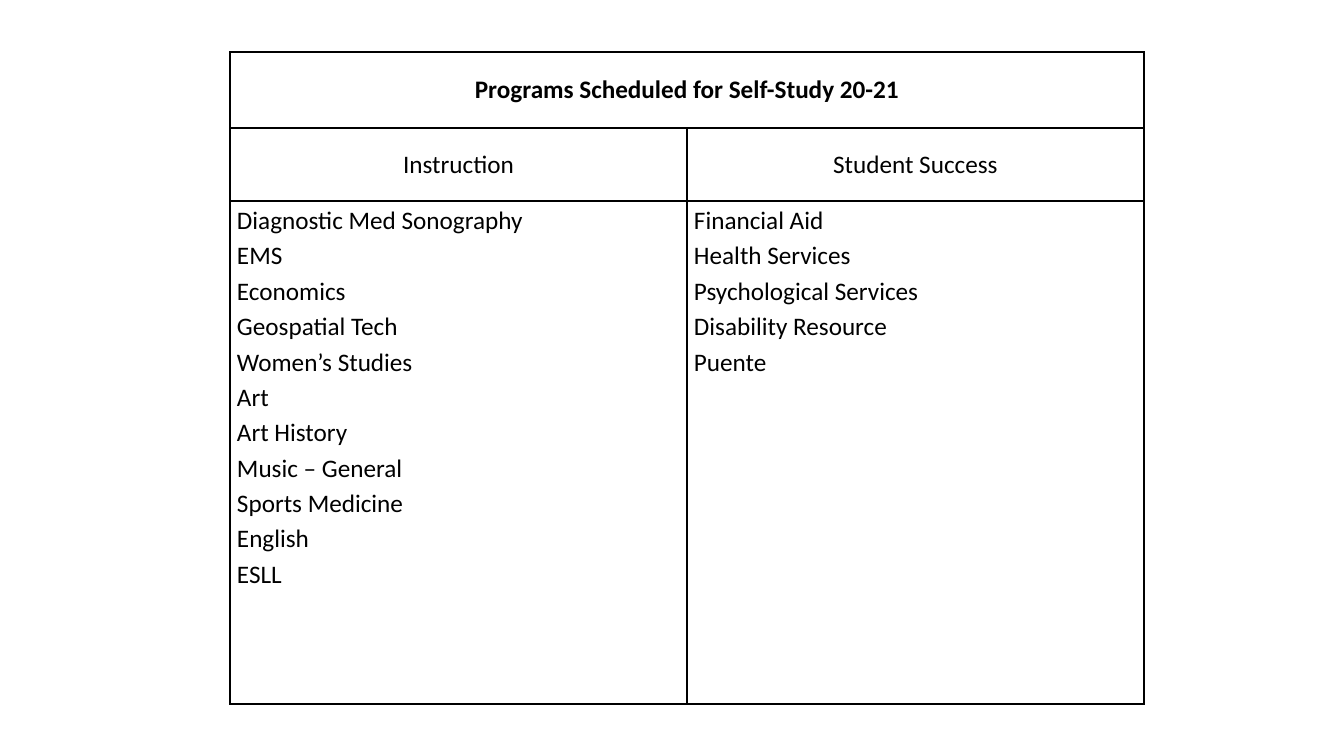
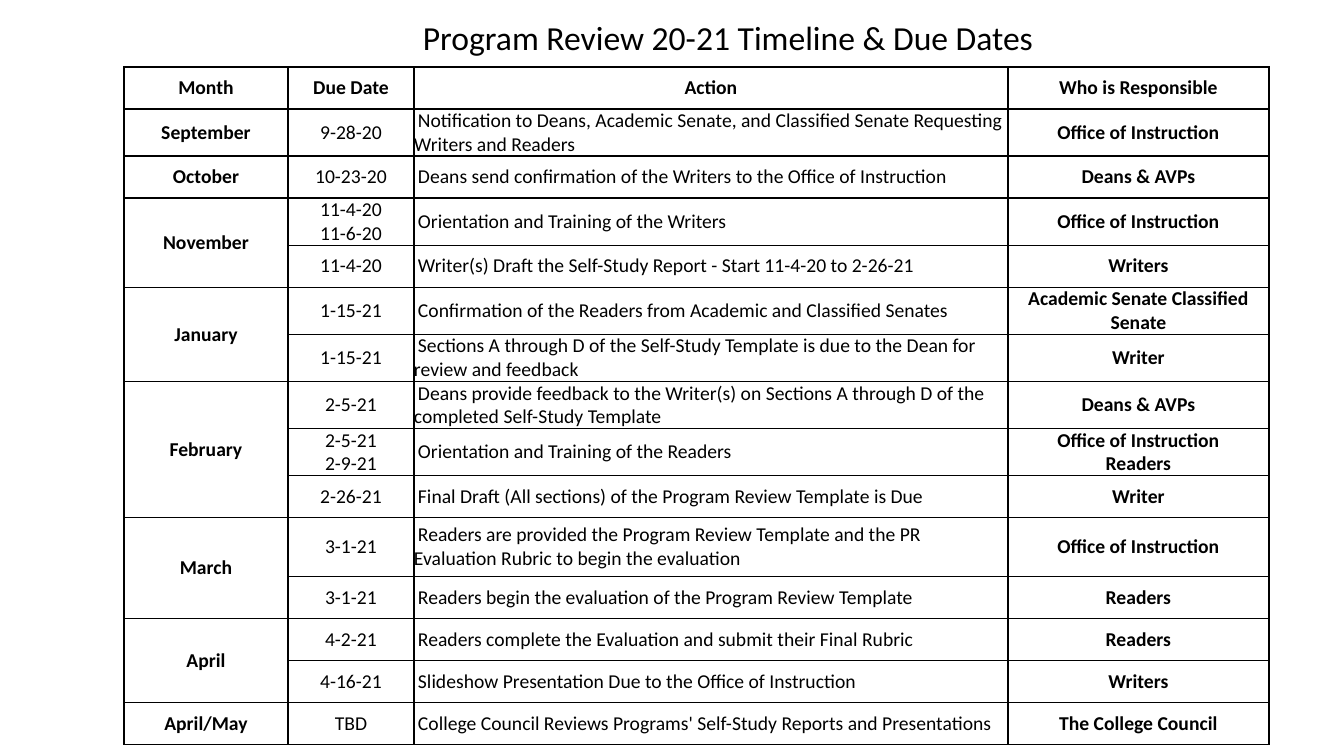
from lxml import etree
from pptx import Presentation
from pptx.dml.color import RGBColor
from pptx.enum import text
from pptx.oxml.ns import qn
from pptx.util import Pt

PX = 914400 / 100.8
BLACK = RGBColor(0x00, 0x00, 0x00)
FONT = "Calibri"
CENTER, LEFT = text.PP_ALIGN.CENTER, text.PP_ALIGN.LEFT
TOP, MIDDLE = text.MSO_ANCHOR.TOP, text.MSO_ANCHOR.MIDDLE


def px(length):
    return round(length * PX)


def add_grid(slide, left, top, widths, heights, inset):
    """Add an unfilled table with thin black borders on every cell."""
    table = slide.shapes.add_table(len(heights), len(widths), px(left), px(top),
                                   px(sum(widths)), px(sum(heights))).table
    table.first_row = table.horz_banding = False
    for column, width in zip(table.columns, widths):
        column.width = px(width)
    for row, height in zip(table.rows, heights):
        row.height = px(height)
    for cell in table.iter_cells():
        cell.margin_left = cell.margin_right = px(inset)
        cell.margin_top = cell.margin_bottom = 0
        properties = cell._tc.get_or_add_tcPr()
        for edge in ("a:lnL", "a:lnR", "a:lnT", "a:lnB"):
            line = etree.SubElement(properties, qn(edge), w=str(Pt(1)))
            fill = etree.SubElement(line, qn("a:solidFill"))
            etree.SubElement(fill, qn("a:srgbClr"), val=str(BLACK))
        cell.fill.background()
    return table


def write(holder, words, size, bold=False, align=CENTER, anchor=MIDDLE,
          spacing=1.0, indent=0):
    """Fill a cell or text frame, one paragraph per line of words."""
    holder.vertical_anchor = anchor
    holder.text = words
    frame = getattr(holder, "text_frame", holder)
    for paragraph in frame.paragraphs:
        paragraph.alignment = align
        paragraph.line_spacing = spacing
        if indent:
            paragraph._p.get_or_add_pPr().set("indent", str(px(indent)))
        font = paragraph.font
        font.name, font.size, font.bold = FONT, Pt(size), bold
        font.color.rgb = BLACK


prs = Presentation()
prs.slide_width, prs.slide_height = px(1344), px(756)
blank = prs.slide_layouts[6]

# Programs scheduled for self-study
PROGRAMS = {
    "Instruction": [
        "Diagnostic Med Sonography", "EMS", "Economics", "Geospatial Tech",
        "Women’s Studies", "Art", "Art History", "Music – General",
        "Sports Medicine", "English", "ESLL"],
    "Student Success": [
        "Financial Aid", "Health Services", "Psychological Services",
        "Disability Resource", "Puente"],
}
slide = prs.slides.add_slide(blank)
programs = add_grid(slide, 230, 52, [457, 457], [76, 73, 503], inset=7)
programs.cell(0, 0).merge(programs.cell(0, 1))
write(programs.cell(0, 0), "Programs Scheduled for Self-Study 20-21", 18, bold=True)
for col, (division, names) in enumerate(PROGRAMS.items()):
    write(programs.cell(1, col), division, 18)
    write(programs.cell(2, col), "\n".join(names), 18,
          align=LEFT, anchor=TOP, spacing=1.15)

# Timeline and due dates
HEADINGS = ["Month", "Due Date", "Action", "Who is Responsible"]
TIMELINE = [
    ("September", [
        ("9-28-20", "Notification to Deans, Academic Senate, and Classified Senate "
         "Requesting Writers and Readers", "Office of Instruction")]),
    ("October", [
        ("10-23-20", "Deans send confirmation of the Writers to the Office of Instruction",
         "Deans & AVPs")]),
    ("November", [
        ("11-4-20\n11-6-20", "Orientation and Training of the Writers",
         "Office of Instruction"),
        ("11-4-20", "Writer(s) Draft the Self-Study Report - Start 11-4-20 to 2-26-21",
         "Writers")]),
    ("January", [
        ("1-15-21", "Confirmation of the Readers from Academic and Classified Senates",
         "Academic Senate Classified Senate"),
        ("1-15-21", "Sections A through D of the Self-Study Template is due to the Dean "
         "for review and feedback", "Writer")]),
    ("February", [
        ("2-5-21", "Deans provide feedback to the Writer(s) on Sections A through D "
         "of the completed Self-Study Template", "Deans & AVPs"),
        ("2-5-21\n2-9-21", "Orientation and Training of the Readers",
         "Office of Instruction\nReaders"),
        ("2-26-21", "Final Draft (All sections) of the Program Review Template is Due",
         "Writer")]),
    ("March", [
        ("3-1-21", "Readers are provided the Program Review Template and the PR "
         "Evaluation Rubric to begin the evaluation", "Office of Instruction"),
        ("3-1-21", "Readers begin the evaluation of the Program Review Template",
         "Readers")]),
    ("April", [
        ("4-2-21", "Readers complete the Evaluation and submit their Final Rubric",
         "Readers"),
        ("4-16-21", "Slideshow Presentation Due to the Office of Instruction",
         "Writers")]),
    ("April/May", [
        ("TBD", "College Council Reviews Programs' Self-Study Reports and Presentations",
         "The College Council")]),
]
ROW_HEIGHT, RUBRIC_ROW, RUBRIC_HEIGHT = 42, 10, 59

slide = prs.slides.add_slide(blank)
title = slide.shapes.add_textbox(px(413), 0, px(639), px(80)).text_frame
title.word_wrap = True
write(title, "Program Review 20-21 Timeline & Due Dates", 24, align=LEFT, spacing=0.9)

heights = [ROW_HEIGHT] * (1 + sum(len(steps) for _, steps in TIMELINE))
heights[RUBRIC_ROW] = RUBRIC_HEIGHT
timeline = add_grid(slide, 124, 67, [164, 126, 594, 261], heights, inset=0)
for col, heading in enumerate(HEADINGS):
    write(timeline.cell(0, col), heading, 14, bold=True)
row = 1
for month, steps in TIMELINE:
    if len(steps) > 1:
        timeline.cell(row, 0).merge(timeline.cell(row + len(steps) - 1, 0))
    write(timeline.cell(row, 0), month, 14, bold=True)
    for due, action, responsible in steps:
        write(timeline.cell(row, 1), due, 14)
        write(timeline.cell(row, 2), action, 14, align=LEFT, indent=4)
        write(timeline.cell(row, 3), responsible, 14, bold=True)
        row += 1

prs.save("out.pptx")
